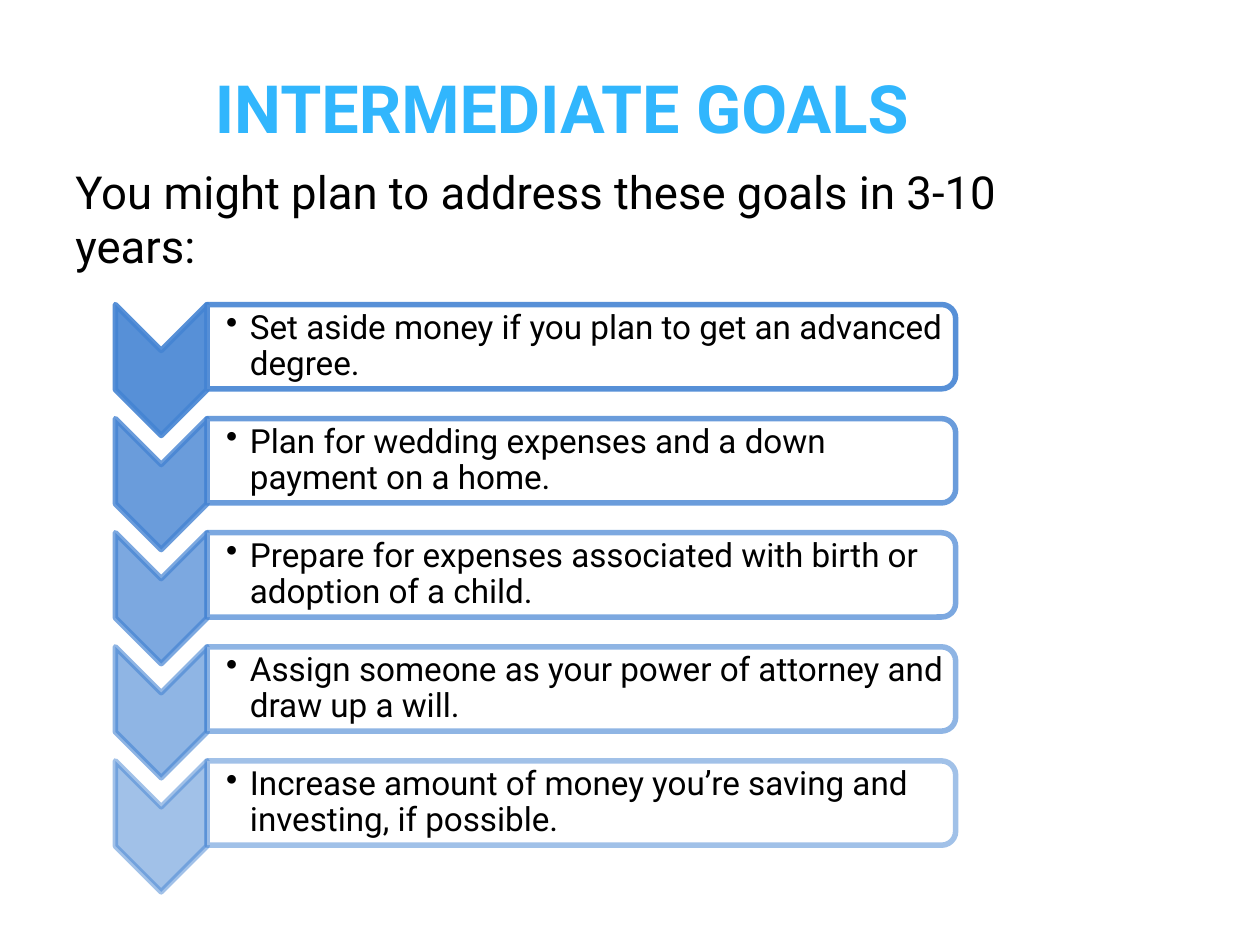
from lxml.etree import SubElement
from pptx import Presentation
from pptx.dml.color import RGBColor
from pptx.enum.shapes import MSO_SHAPE
from pptx.enum.text import MSO_ANCHOR, PP_ALIGN
from pptx.oxml.ns import qn
from pptx.util import Cm, Pt

TITLE = "INTERMEDIATE GOALS"
INTRODUCTION = "You might plan to address these goals in 3-10 years:"
GOALS = [
    "Set aside money if you plan to get an advanced degree.",
    "Plan for wedding expenses and a down payment on a home.",
    "Prepare for expenses associated with birth or adoption of a child.",
    "Assign someone as your power of attorney and draw up a will.",
    "Increase amount of money you’re saving and investing, if possible.",
]

BLUE, SKY, BLACK, WHITE = "4584D3", "31B6FD", "000000", "FFFFFF"
TITLE_FONT = {"name": "Roboto", "size": Pt(38), "bold": True}
INTRODUCTION_FONT = {"name": "Roboto", "size": Pt(26)}
GOAL_FONT = {"name": "Roboto", "size": Pt(19)}

# Lengths in centimetres; row positions are vertical centres
ROW_PITCH = 2.3
CHEVRON_X, CHEVRON_Y, CHEVRON_SIZE = 3.25, 7.46, (2.64, 1.85)
BAR_X, BAR_Y, BAR_SIZE = 11.72, 6.99, (1.7, 15.09)
GOAL_LEFT, GOAL_SIZE = 4.17, (15.01, 1.55)


def color(hex_text):
    return RGBColor.from_string(hex_text)


def set_alpha(color_format, percent):
    """Make a solid fill translucent."""
    choice = color_format._xPr.find(qn("a:solidFill"))[0]
    SubElement(choice, qn("a:alpha"), val=str(percent * 1000))


def add_turned_shape(slide, preset, center, size, fill, fill_alpha, line_alpha):
    """Add a shape turned a quarter clockwise about its centre."""
    (x, y), (width, height) = center, size
    shape = slide.shapes.add_shape(
        preset, Cm(x - width / 2), Cm(y - height / 2), Cm(width), Cm(height))
    shape.rotation = 90
    shape.shadow.inherit = False
    for fill_format, hex_text, alpha in ((shape.fill, fill, fill_alpha),
                                         (shape.line.fill, BLUE, line_alpha)):
        fill_format.solid()
        fill_format.fore_color.rgb = color(hex_text)
        set_alpha(fill_format, alpha)
    shape.line.width = Pt(3.15)


def add_text(slide, text, box, font, hex_text, frame_format, bullet=False):
    shape = slide.shapes.add_textbox(*(Cm(length) for length in box))
    frame = shape.text_frame
    frame.word_wrap = True
    for name, value in frame_format.items():
        setattr(frame, name, value)
    paragraph = frame.paragraphs[0]
    paragraph.text = text
    if bullet:
        properties = paragraph._p.get_or_add_pPr()
        properties.set("marL", str(Cm(0.48)))
        properties.set("indent", str(-Cm(0.48)))
        SubElement(properties, qn("a:buChar"), char="•")
        paragraph.line_spacing = 0.9
    for name, value in font.items():
        setattr(paragraph.font, name, value)
    paragraph.font.color.rgb = color(hex_text)
    return paragraph


def add_goal(slide, row, goal):
    offset = row * ROW_PITCH
    strength = 90 - 10 * row
    add_turned_shape(slide, MSO_SHAPE.CHEVRON, (CHEVRON_X, CHEVRON_Y + offset),
                     CHEVRON_SIZE, BLUE, strength, strength)
    add_turned_shape(slide, MSO_SHAPE.ROUND_2_SAME_RECTANGLE, (BAR_X, BAR_Y + offset),
                     BAR_SIZE, WHITE, 90, strength)
    width, height = GOAL_SIZE
    box = (GOAL_LEFT, BAR_Y + offset - height / 2, width, height)
    edge = Cm(0.03)
    frame_format = {"vertical_anchor": MSO_ANCHOR.MIDDLE, "margin_left": Cm(0.39),
                    "margin_top": edge, "margin_right": edge, "margin_bottom": edge}
    add_text(slide, goal, box, GOAL_FONT, BLACK, frame_format, bullet=True)


def main():
    presentation = Presentation()
    presentation.slide_width, presentation.slide_height = Cm(25.4), Cm(19.05)
    slide = presentation.slides.add_slide(presentation.slide_layouts[6])
    title = add_text(slide, TITLE, (1.27, 0.89, 20.12, 2.08), TITLE_FONT, SKY,
                     {"vertical_anchor": MSO_ANCHOR.BOTTOM, "margin_top": 0,
                      "margin_bottom": 0})
    title.alignment = PP_ALIGN.CENTER
    add_text(slide, INTRODUCTION, (1.27, 3.18, 20.12, 14.76),
             INTRODUCTION_FONT, BLACK, {"vertical_anchor": MSO_ANCHOR.TOP})
    for row, goal in enumerate(GOALS):
        add_goal(slide, row, goal)
    presentation.save("out.pptx")


if __name__ == "__main__":
    main()
